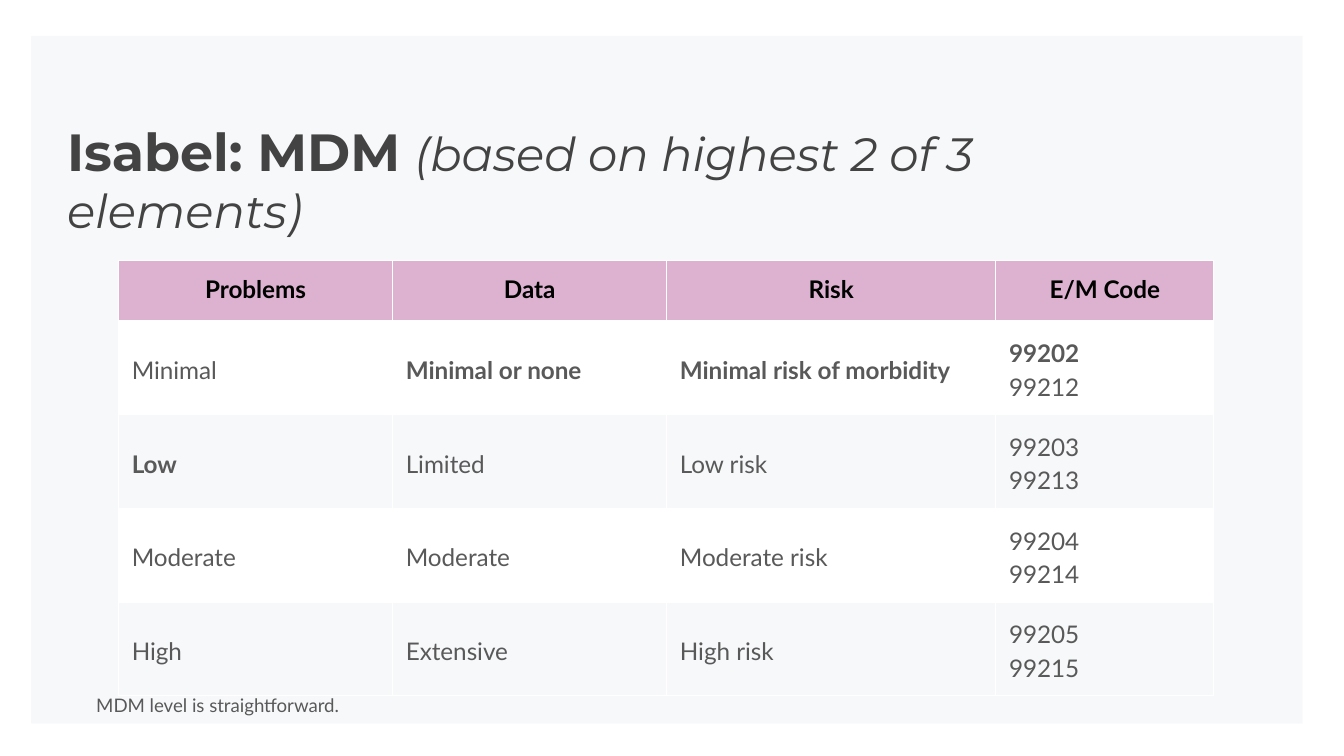
from dataclasses import dataclass

from pptx import Presentation
from pptx.dml.color import RGBColor as Rgb
from pptx.enum.shapes import MSO_SHAPE as Shape
from pptx.enum.text import MSO_ANCHOR as Anchor, PP_ALIGN as Align
from pptx.oxml import parse_xml
from pptx.oxml.ns import nsdecls, qn
from pptx.util import Cm, Pt


@dataclass(frozen=True)
class Theme:
    head: str = "Montserrat"
    body: str = "Lato"
    dark: str = "434343"
    gray: str = "595959"
    black: str = "000000"
    white: str = "FFFFFF"
    navy: str = "073763"
    pink: str = "C87DB1"
    big: float = 28
    mid: float = 25
    cell: float = 13
    note: float = 10
    rule: float = 0.75


T = Theme()
PAD = Cm(0.25)
COLS = (5.18, 5.18, 6.22, 4.12)
HEADS = ("Problems", "Data", "Risk", "E/M Code")
ROWS = (
    ("Minimal", "Minimal or none", "Minimal risk of morbidity", "99202\n99212"),
    ("Low", "Limited", "Low risk", "99203\n99213"),
    ("Moderate", "Moderate", "Moderate risk", "99204\n99214"),
    ("High", "Extensive", "High risk", "99205\n99215"),
)
BOLD = {"Minimal or none", "Minimal risk of morbidity", "99202", "Low"}


def style(run, face, size, color, bold=False, slant=False):
    font = run.font
    font.name, font.size = face, Pt(size)
    font.bold, font.italic = bold, slant
    font.color.rgb = Rgb.from_string(color)


def paint(fill, color, alpha=100):
    fill.solid()
    fill.fore_color.rgb = Rgb.from_string(color)
    if alpha < 100:
        tone = fill._xPr.find(qn("a:solidFill"))[0]
        tone.append(parse_xml(f'<a:alpha {nsdecls("a")} val="{alpha * 1000}"/>'))


def add_panel(slide):
    panel = slide.shapes.add_shape(
        Shape.RECTANGLE, Cm(0.59), Cm(0.68), Cm(24.03), Cm(13))
    panel.shadow.inherit = False
    panel.line.fill.background()
    paint(panel.fill, T.navy, 3)


def add_box(slide, left, top, width, height):
    box = slide.shapes.add_textbox(Cm(left), Cm(top), Cm(width), Cm(height))
    frame = box.text_frame
    frame.word_wrap = True
    frame.margin_left = frame.margin_right = PAD
    frame.margin_top = frame.margin_bottom = PAD
    return frame.paragraphs[0]


def add_title(slide):
    para = add_box(slide, 1.02, 2.01, 18.08, 1.6)
    name, basis = para.add_run(), para.add_run()
    name.text = "Isabel: MDM "
    basis.text = "(based on highest 2 of 3 elements)"
    style(name, T.head, T.big, T.dark, bold=True)
    style(basis, T.head, T.mid, T.dark, slant=True)


def add_note(slide):
    para = add_box(slide, 1.57, 12.8, 20.65, 0.71)
    para.text = "MDM level is straightforward."
    para.line_spacing = 1.15
    para.space_after = Pt(16)
    style(para.runs[0], T.body, T.note, T.gray)


def add_edges(cell):
    props = cell._tc.get_or_add_tcPr()
    for spot, side in enumerate(("lnL", "lnR", "lnT", "lnB")):
        props.insert(spot, parse_xml(
            f'<a:{side} {nsdecls("a")} w="{Pt(T.rule)}"><a:solidFill>'
            f'<a:srgbClr val="{T.white}"/></a:solidFill></a:{side}>'))


def fill_cell(cell, text, row):
    cell.margin_left = cell.margin_right = PAD
    cell.margin_top = cell.margin_bottom = PAD
    cell.vertical_anchor = Anchor.MIDDLE if row else Anchor.TOP
    cell.text_frame.text = text
    for para in cell.text_frame.paragraphs:
        if row:
            para.line_spacing = 1.15
        else:
            para.alignment = Align.CENTER
        for run in para.runs:
            style(run, T.body, T.cell, T.gray if row else T.black,
                  bold=not row or run.text in BOLD)
    if row == 0:
        paint(cell.fill, T.pink, 57)
    elif row % 2:
        paint(cell.fill, T.white)
    else:
        cell.fill.background()
    add_edges(cell)


def add_grid(slide):
    data = (HEADS, *ROWS)
    grid = slide.shapes.add_table(
        len(data), len(COLS), Cm(2.24), Cm(4.93), Cm(sum(COLS)), Cm(8.22)).table
    grid.horz_banding = False
    for col, width in zip(grid.columns, COLS):
        col.width = Cm(width)
    for row, texts in enumerate(data):
        grid.rows[row].height = Cm(1.77 if row else 1.14)
        for col, text in enumerate(texts):
            fill_cell(grid.cell(row, col), text, row)


def main():
    deck = Presentation()
    deck.slide_width, deck.slide_height = Cm(25.4), Cm(14.29)
    slide = deck.slides.add_slide(deck.slide_layouts[6])
    add_panel(slide)
    add_title(slide)
    add_note(slide)
    add_grid(slide)
    deck.save("out.pptx")


if __name__ == "__main__":
    main()
